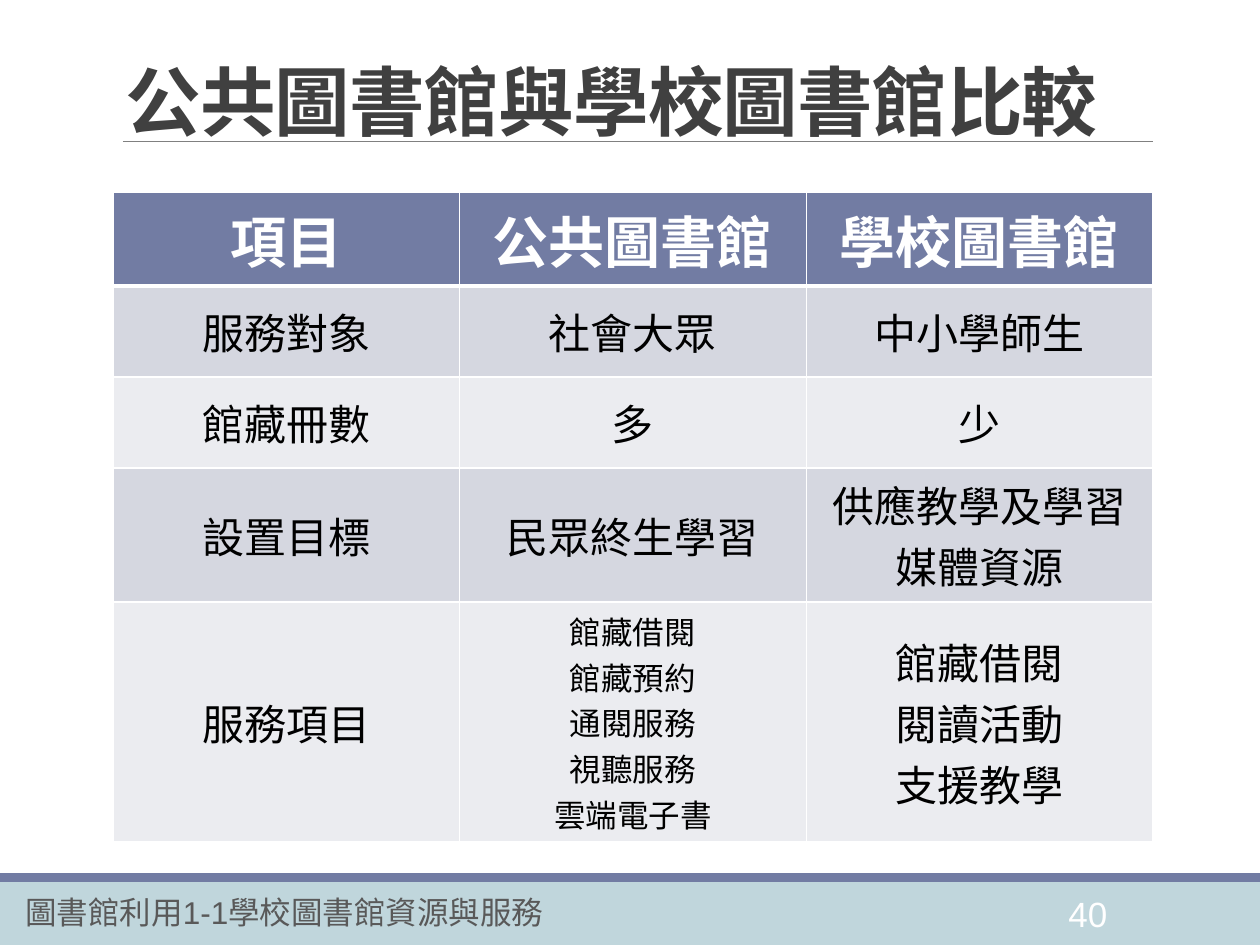
from lxml import etree
from pptx import Presentation
from pptx.dml.color import RGBColor
from pptx.enum.shapes import MSO_CONNECTOR, MSO_SHAPE
from pptx.enum.text import MSO_ANCHOR, PP_ALIGN
from pptx.oxml.ns import qn
from pptx.util import Pt

RECT, LINE = MSO_SHAPE.RECTANGLE, MSO_CONNECTOR.STRAIGHT
CENTER, LEFT = PP_ALIGN.CENTER, PP_ALIGN.LEFT
TOP, MIDDLE, BOTTOM = MSO_ANCHOR.TOP, MSO_ANCHOR.MIDDLE, MSO_ANCHOR.BOTTOM
EMU = 914400 / 126
CJK = "Noto Sans CJK SC"

# Content
TITLE = "公共圖書館與學校圖書館比較"
FOOTER = "圖書館利用1-1學校圖書館資源與服務"
NUMBER = "40"
ROWS = [
    ("項目", "公共圖書館", "學校圖書館"),
    ("服務對象", "社會大眾", "中小學師生"),
    ("館藏冊數", "多", "少"),
    ("設置目標", "民眾終生學習", "供應教學及學習媒體資源"),
    ("服務項目",
     "館藏借閱\n館藏預約\n通閱服務\n視聽服務\n雲端電子書",
     "館藏借閱\n閱讀活動\n支援教學"),
]
HEIGHTS = [94, 91, 91, 134, 240]
WIDTH = 1040
HEAD, BANDS = "727CA3", ("EBECF0", "D5D7E0")


def px(n):
    return round(n * EMU)


def box(*sides):
    return [px(n) for n in sides]


def color(code):
    return RGBColor.from_string(code)


def write(frame, text, size, ink, bold=False, font="Arial", align=LEFT):
    frame.text = text
    for para in frame.paragraphs:
        para.alignment = align
        face = para.font
        face.size, face.bold, face.name = Pt(size), bold, font
        face.color.rgb = color(ink)
        props = para._p.pPr.find(qn("a:defRPr"))
        etree.SubElement(props, qn("a:ea")).set("typeface", CJK)


def label(slide, sides, text, size, ink, anchor=TOP, **style):
    frame = slide.shapes.add_textbox(*box(*sides)).text_frame
    frame.word_wrap = True
    frame.vertical_anchor = anchor
    write(frame, text, size, ink, **style)
    return frame.paragraphs[0]


def bar(slide, sides, fill):
    shape = slide.shapes.add_shape(RECT, *box(*sides))
    shape.shadow.inherit = False
    shape.fill.solid()
    shape.fill.fore_color.rgb = color(fill)
    shape.line.fill.background()


def border(cell, widths):
    props = cell._tc.get_or_add_tcPr()
    for at, (side, width) in enumerate(widths.items()):
        edge = etree.Element(qn("a:" + side), w=str(Pt(width)))
        fill = etree.SubElement(edge, qn("a:solidFill"))
        etree.SubElement(fill, qn("a:srgbClr"), val="FFFFFF")
        props.insert(at, edge)


def grid(slide):
    count = len(ROWS[0])
    table = slide.shapes.add_table(
        len(ROWS), count, *box(113, 192, WIDTH, sum(HEIGHTS))).table
    for col in table.columns:
        col.width = px(WIDTH / count)
    for r, texts in enumerate(ROWS):
        table.rows[r].height = px(HEIGHTS[r])
        for c, text in enumerate(texts):
            cell = table.cell(r, c)
            cell.vertical_anchor = MIDDLE
            cell.fill.solid()
            cell.fill.fore_color.rgb = color(BANDS[r % 2] if r else HEAD)
            size = 32 if r == 0 else 18 if text.count("\n") > 2 else 24
            write(cell.text_frame, text, size, "000000" if r else "FFFFFF",
                  bold=r == 0, align=CENTER)
            border(cell, {"lnL": 1, "lnR": 1, "lnT": 3 if r == 1 else 1,
                          "lnB": 1 if r else 3})


def main():
    deck = Presentation()
    deck.slide_width, deck.slide_height = box(1260, 945)
    slide = deck.slides.add_slide(deck.slide_layouts[6])

    # Footer bars and title rule
    bar(slide, (0, 882, 1260, 63), "C0D6DC")
    bar(slide, (0, 873, 1260, 9), HEAD)
    rule = slide.shapes.add_connector(LINE, *box(123, 141, 1153, 141))
    rule.line.color.rgb = color("808080")
    rule.line.width = Pt(0.5)
    etree.SubElement(rule._element.spPr, qn("a:effectLst"))

    # Footer texts and title
    label(slide, (1056, 886, 88, 50), NUMBER, 20, "FFFFFF")
    label(slide, (13, 887, 586, 50), FOOTER, 18, "595959")
    head = label(slide, (113, 50, 1040, 102), TITLE, 43.2, "404040",
                 anchor=BOTTOM, bold=True, font=CJK)
    head.line_spacing = 0.85
    head._p.pPr.find(qn("a:defRPr")).set("spc", "-50")

    # Comparison table
    grid(slide)
    deck.save("out.pptx")


if __name__ == "__main__":
    main()
